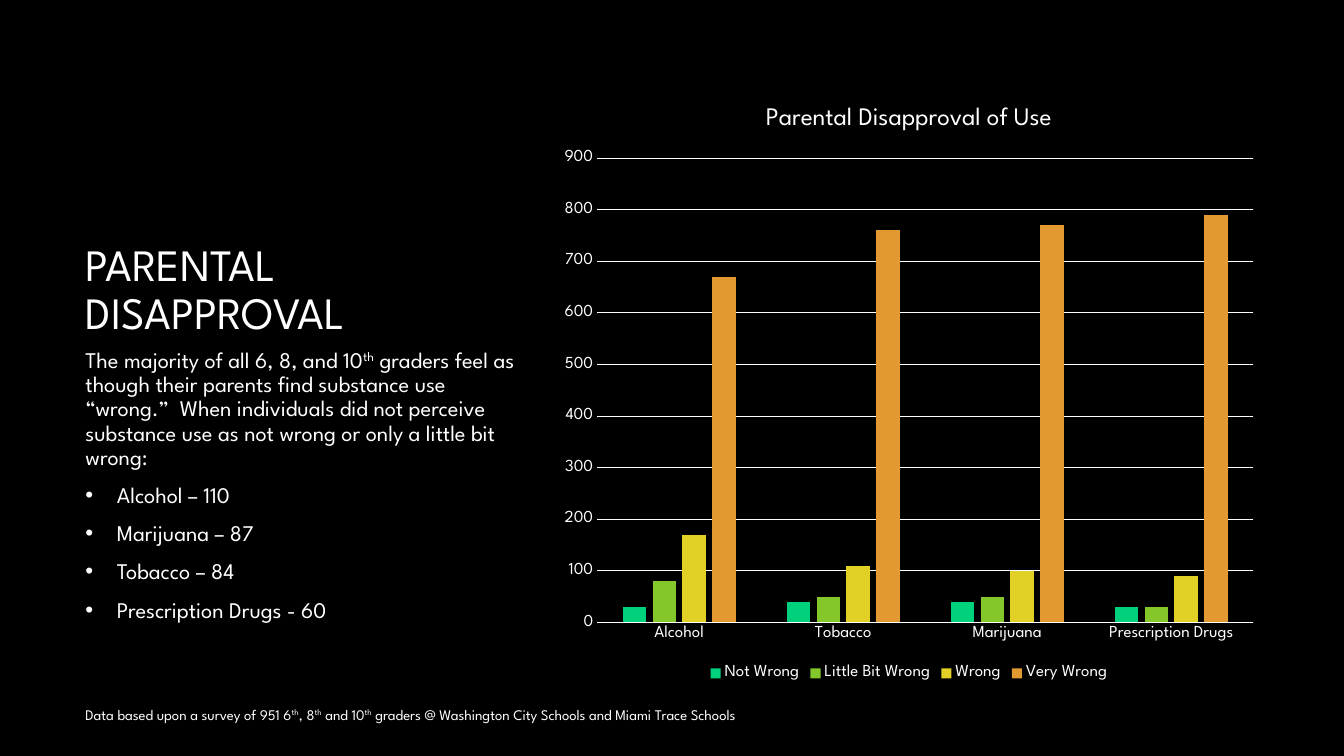
import pptx
import pptx.chart.data
import pptx.dml.color
import pptx.enum.chart
import pptx.enum.text
import pptx.util
from lxml import etree

Pt = pptx.util.Pt
RGBColor = pptx.dml.color.RGBColor

FONT = "League Spartan"
BLACK = RGBColor(0x00, 0x00, 0x00)
WHITE = RGBColor(0xFF, 0xFF, 0xFF)
GREEN = RGBColor(0x01, 0xD1, 0x7D)
LIME = RGBColor(0x84, 0xC7, 0x2A)
YELLOW = RGBColor(0xE1, 0xD1, 0x26)
ORANGE = RGBColor(0xE2, 0x99, 0x32)

CATEGORIES = ["Alcohol", "Tobacco", "Marijuana", "Prescription Drugs"]
SERIES = [
    ("Not Wrong", GREEN, [30, 40, 40, 30]),
    ("Little Bit Wrong", LIME, [80, 50, 50, 30]),
    ("Wrong", YELLOW, [170, 110, 100, 90]),
    ("Very Wrong", ORANGE, [670, 760, 770, 790]),
]
INTRODUCTION = [
    "The majority of all 6, 8, and 10",
    "th",
    " graders feel as though their parents find substance use “wrong.”  When individuals "
    "did not perceive substance use as not wrong or only a little bit wrong:",
]
COUNTS = ["Alcohol – 110", "Marijuana – 87", "Tobacco – 84", "Prescription Drugs - 60"]
FOOTNOTE = [
    "Data based upon a survey of 951 6",
    "th",
    ", 8",
    "th",
    " and 10",
    "th",
    " graders @ Washington City Schools and Miami Trace Schools",
]


def style_font(font, size):
    """Apply the slide's typeface and white colour at the given size."""
    font.name = FONT
    font.size = Pt(size)
    font.bold = False
    font.color.rgb = WHITE


def add_runs(paragraph, texts, size):
    """Add the texts as runs, raising each ordinal ending."""
    for text in texts:
        run = paragraph.add_run()
        run.text = text
        style_font(run.font, size)
        if text == "th":
            run.font._element.set("baseline", "30000")


def add_bullet(paragraph):
    """Give the paragraph a hanging round bullet."""
    properties = paragraph._p.get_or_add_pPr()
    properties.set("marL", str(Pt(22.5)))
    properties.set("indent", str(Pt(-22.5)))
    namespace = pptx.oxml.ns.qn
    etree.SubElement(properties, namespace("a:buFont")).set("typeface", "Arial")
    etree.SubElement(properties, namespace("a:buChar")).set("char", "•")


def add_text_frame(slide, left, top, width, height):
    """Add a wrapping text box and return its frame."""
    shape = slide.shapes.add_textbox(Pt(left), Pt(top), Pt(width), Pt(height))
    shape.text_frame.word_wrap = True
    return shape.text_frame


def place_title(slide, left, top, width, height):
    """Place the heading at the bottom of its box."""
    title = slide.shapes.title
    title.left, title.top, title.width, title.height = map(Pt, (left, top, width, height))
    frame = title.text_frame
    frame.word_wrap = True
    frame.auto_size = pptx.enum.text.MSO_AUTO_SIZE.NONE
    frame.vertical_anchor = pptx.enum.text.MSO_ANCHOR.BOTTOM
    paragraph = frame.paragraphs[0]
    paragraph.alignment = pptx.enum.text.PP_ALIGN.LEFT
    paragraph.line_spacing = 0.9
    add_runs(paragraph, ["PARENTAL DISAPPROVAL"], 32)


def add_findings(slide, left, top, width, height):
    """Add the introduction and the bulleted counts."""
    frame = add_text_frame(slide, left, top, width, height)
    introduction = frame.paragraphs[0]
    introduction.line_spacing = 0.9
    add_runs(introduction, INTRODUCTION, 16)
    for count in COUNTS:
        paragraph = frame.add_paragraph()
        paragraph.line_spacing = 0.9
        paragraph.space_before = Pt(10)
        add_bullet(paragraph)
        add_runs(paragraph, [count], 16)


def add_footnote(slide, left, top, width, height):
    """Add the line on the survey behind the data."""
    frame = add_text_frame(slide, left, top, width, height)
    add_runs(frame.paragraphs[0], FOOTNOTE, 10.5)


def style_line(line):
    """Draw a thin white line."""
    line.color.rgb = WHITE
    line.width = Pt(0.75)


def add_disapproval_chart(slide, left, top, width, height):
    """Add the clustered columns of disapproval by substance."""
    data = pptx.chart.data.CategoryChartData()
    data.categories = CATEGORIES
    for name, color, values in SERIES:
        data.add_series(name, values)
    chart = slide.shapes.add_chart(
        pptx.enum.chart.XL_CHART_TYPE.COLUMN_CLUSTERED,
        Pt(left), Pt(top), Pt(width), Pt(height), data,
    ).chart
    style_font(chart.font, 10)

    chart.has_title = True
    add_runs(chart.chart_title.text_frame.paragraphs[0], ["Parental Disapproval of Use"], 18)
    chart.chart_title.include_in_layout = False

    chart.has_legend = True
    chart.legend.position = pptx.enum.chart.XL_LEGEND_POSITION.BOTTOM
    chart.legend.include_in_layout = False
    style_font(chart.legend.font, 12)

    for axis in (chart.category_axis, chart.value_axis):
        axis.major_tick_mark = pptx.enum.chart.XL_TICK_MARK.NONE
        axis.minor_tick_mark = pptx.enum.chart.XL_TICK_MARK.NONE
        style_font(axis.tick_labels.font, 12)
    style_line(chart.category_axis.format.line)
    value_axis = chart.value_axis
    value_axis.minimum_scale = 0
    value_axis.maximum_scale = 900
    value_axis.major_unit = 100
    value_axis.format.line.fill.background()
    value_axis.has_major_gridlines = True
    style_line(value_axis.major_gridlines.format.line)

    plot = chart.plots[0]
    plot.vary_by_categories = False
    plot.gap_width = 219
    plot.overlap = -27
    for series, (name, color, values) in zip(plot.series, SERIES):
        series.format.fill.solid()
        series.format.fill.fore_color.rgb = color


def main():
    """Build and save the slide."""
    presentation = pptx.Presentation()
    presentation.slide_width = Pt(960)
    presentation.slide_height = Pt(540)
    slide = presentation.slides.add_slide(presentation.slide_layouts[5])
    slide.background.fill.solid()
    slide.background.fill.fore_color.rgb = BLACK
    place_title(slide, 54, 120, 324, 126)
    add_disapproval_chart(slide, 393, 59, 512.5, 430.5)
    add_findings(slide, 54, 246, 324, 243.5)
    add_footnote(slide, 54, 500.5, 612, 29)
    presentation.save("out.pptx")


if __name__ == "__main__":
    main()
